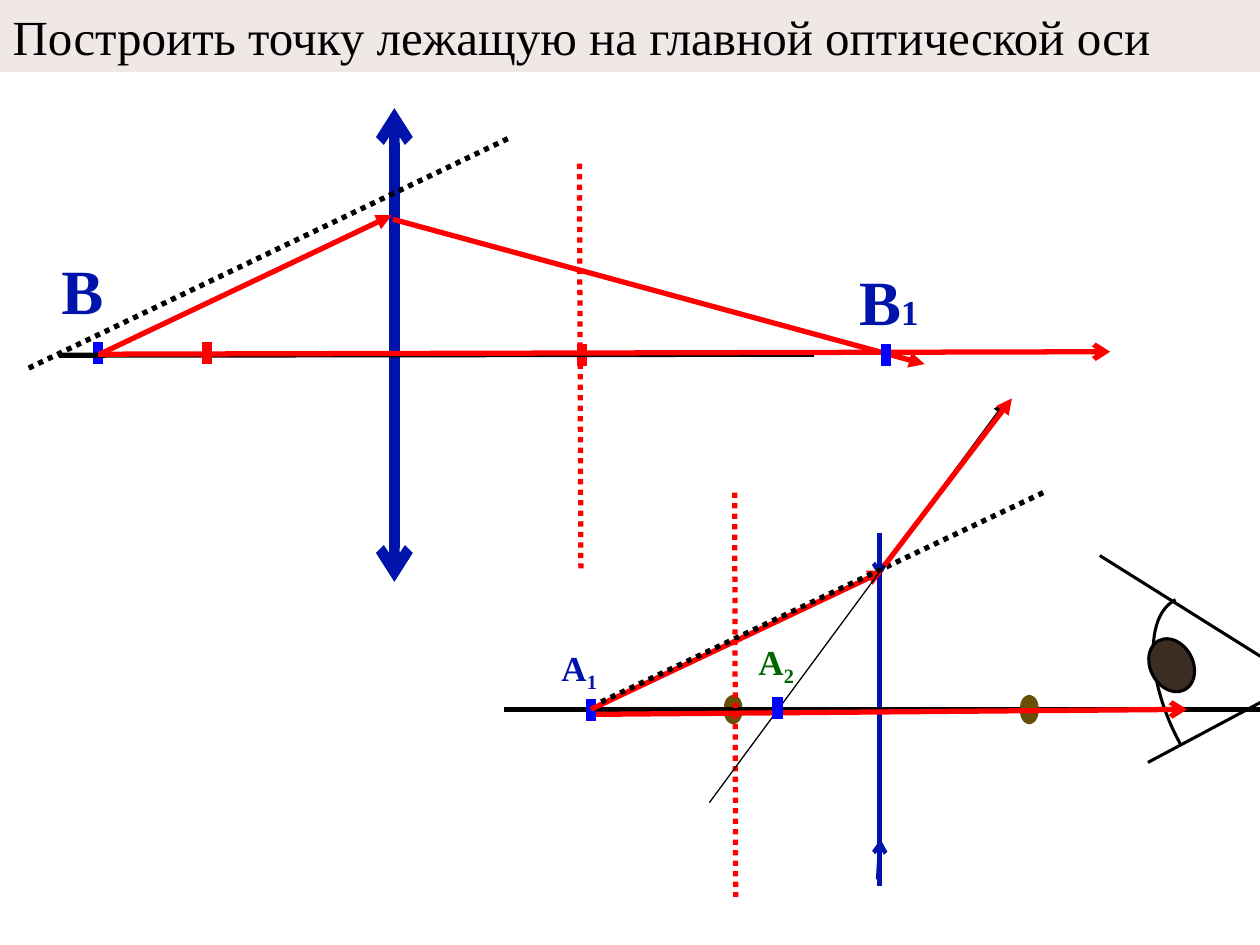
from dataclasses import dataclass
from typing import Optional

from lxml.etree import SubElement
from pptx import Presentation
from pptx.dml.color import RGBColor
from pptx.enum.dml import MSO_LINE
from pptx.enum.shapes import MSO_CONNECTOR, MSO_SHAPE
from pptx.enum.text import MSO_ANCHOR, MSO_AUTO_SIZE, PP_ALIGN
from pptx.oxml.ns import qn
from pptx.util import Cm, Pt

Point = tuple[float, float]


@dataclass(frozen=True)
class Theme:
    font: str = "Times New Roman"
    black: str = "000000"
    red: str = "FF0000"
    navy: str = "0014AC"
    blue: str = "0000FF"
    green: str = "006600"
    olive: str = "695008"
    brown: str = "3B2C24"
    band: str = "F0E8E6"
    title: int = 28
    big: int = 36
    small: int = 20


T = Theme()


@dataclass(frozen=True)
class Line:
    start: Point
    end: Point
    color: str = T.red
    width: float = 3
    dotted: bool = False
    head: Optional[str] = None
    tail: Optional[str] = None


@dataclass(frozen=True)
class Oval:
    left: float
    top: float
    width: float
    height: float
    fill: str
    line: str
    weight: float
    rotation: float = 0


@dataclass(frozen=True)
class Label:
    left: float
    top: float
    width: float
    height: float
    letter: str
    index: str
    size: int
    color: str
    subscript: bool = False


def tick(x: float, y: float, color: str) -> Line:
    return Line((x, y), (x, y + 0.44), color, 6)


def focus(x: float) -> Oval:
    return Oval(x, 14.1, 0.2, 0.41, T.red, T.olive, 5.25)


def rgb(color: str) -> RGBColor:
    return RGBColor.from_string(color)


def draw_line(s, item: Line) -> None:
    ends = (Cm(v) for v in (*item.start, *item.end))
    c = s.shapes.add_connector(MSO_CONNECTOR.STRAIGHT, *ends)
    c.line.color.rgb = rgb(item.color)
    c.line.width = Pt(item.width)
    if item.dotted:
        c.line.dash_style = MSO_LINE.ROUND_DOT
    sp_pr = c._element.spPr
    ln = sp_pr.find(qn("a:ln"))
    for tag, kind in (("a:headEnd", item.head), ("a:tailEnd", item.tail)):
        if kind:
            SubElement(ln, qn(tag), type=kind)
    SubElement(sp_pr, qn("a:effectLst"))


def draw_oval(s, item: Oval) -> None:
    box = (Cm(v) for v in (item.left, item.top, item.width, item.height))
    sp = s.shapes.add_shape(MSO_SHAPE.OVAL, *box)
    sp.shadow.inherit = False
    sp.rotation = item.rotation
    sp.fill.solid()
    sp.fill.fore_color.rgb = rgb(item.fill)
    sp.line.color.rgb = rgb(item.line)
    sp.line.width = Pt(item.weight)


def add_run(p, text: str, size: int, color: str, bold: bool = False):
    r = p.add_run()
    r.text = text
    r.font.name = T.font
    r.font.size = Pt(size)
    r.font.bold = bold
    r.font.color.rgb = rgb(color)
    return r


def draw_label(s, item: Label) -> None:
    box = (Cm(v) for v in (item.left, item.top, item.width, item.height))
    tf = s.shapes.add_textbox(*box).text_frame
    tf.word_wrap = False
    p = tf.paragraphs[0]
    add_run(p, item.letter, item.size, item.color, True)
    if item.index:
        r = add_run(p, item.index, T.small, item.color, True)
        if item.subscript:
            r._r.get_or_add_rPr().set("baseline", "-25000")


def draw_cornea(s, controls: list[Point], steps: int = 24) -> None:
    def at(t: float) -> Point:
        weights = ((1 - t) ** 3, 3 * t * (1 - t) ** 2, 3 * t * t * (1 - t), t ** 3)
        x, y = (sum(w * c[i] for w, c in zip(weights, controls)) for i in (0, 1))
        return Cm(x), Cm(y)

    points = [at(i / steps) for i in range(steps + 1)]
    fb = s.shapes.build_freeform(*points[0])
    fb.add_line_segments(points[1:], close=False)
    sp = fb.convert_to_shape()
    sp.shadow.inherit = False
    sp.fill.background()
    sp.line.color.rgb = rgb(T.black)
    sp.line.width = Pt(1.75)


def draw_title(s, text: str) -> None:
    sp = s.shapes.title
    sp.left, sp.top, sp.width, sp.height = Cm(0), Cm(0), Cm(25.4), Cm(1.45)
    sp.fill.solid()
    sp.fill.fore_color.rgb = rgb(T.band)
    tf = sp.text_frame
    tf.auto_size = MSO_AUTO_SIZE.NONE
    tf.vertical_anchor = MSO_ANCHOR.MIDDLE
    p = tf.paragraphs[0]
    p.alignment = PP_ALIGN.LEFT
    add_run(p, text, T.title, T.black)


def draw_all(s, items: list) -> None:
    draw = {Line: draw_line, Oval: draw_oval, Label: draw_label}
    for item in items:
        draw[type(item)](s, item)


CONVERGING_LENS = [
    Line((7.95, 2.18), (7.95, 11.73), T.navy, 6, head="arrow", tail="arrow"),
    tick(11.73, 6.93, T.red),
    tick(1.98, 6.9, T.blue),
    Line((11.68, 3.3), (11.71, 11.46), dotted=True),
    Line((2.01, 7.14), (7.9, 4.34), tail="triangle"),
    Line((7.92, 4.42), (18.64, 7.34), tail="triangle"),
    Line((16.41, 7.14), (1.19, 7.16), T.black),
    tick(4.17, 6.9, T.red),
    Label(0.99, 4.95, 1.6, 1.8, "В", "", T.big, T.navy),
    Line((1.98, 7.14), (22.38, 7.09), tail="arrow"),
    Line((0.58, 7.42), (10.29, 2.77), T.black, dotted=True),
    tick(17.86, 6.93, T.blue),
    Label(17.07, 5.16, 2.18, 1.8, "В", "1", T.big, T.navy),
]
DIVERGING_LENS = [
    Line((17.73, 10.74), (17.73, 17.86), T.navy, 2.5),
    Line((17.73, 10.8), (17.73, 11.63), T.navy, 2.5, tail="arrow"),
    Line((17.7, 17.73), (17.75, 16.92), T.navy, 2.5, tail="arrow"),
    focus(14.68),
]
CORNEA = [(23.7, 12.09), (23.06, 12.42), (23.11, 13.74), (23.8, 15.01)]
EYE = [
    Line((26.01, 13.84), (23.14, 15.37), T.black, 1.75),
    Line((26.11, 13.67), (22.17, 11.2), T.black, 1.75),
    Oval(23.19, 12.85, 0.86, 1.12, T.brown, T.black, 1.75, 331.9),
]
VIRTUAL_IMAGE = [
    Label(11.07, 12.9, 1.27, 1.12, "А", "1", T.small, T.navy, True),
    Label(15.04, 12.78, 1.27, 1.12, "А", "2", T.small, T.green, True),
    Line((25.4, 14.3), (10.16, 14.3), T.black),
    tick(11.91, 14.1, T.blue),
    focus(20.65),
    Line((12.01, 14.4), (23.93, 14.3), tail="arrow"),
    Line((11.91, 14.3), (17.81, 11.51), tail="triangle"),
    Line((12.12, 14.15), (21.03, 9.93), T.black, dotted=True),
    Line((14.81, 9.93), (14.83, 18.08), dotted=True),
    Line((14.3, 16.18), (20.24, 8.13), T.black, 0.75, tail="triangle"),
    tick(15.67, 14.05, T.blue),
    Line((17.83, 11.4), (20.4, 8.03), tail="triangle"),
]


def main() -> None:
    prs = Presentation()
    prs.slide_width, prs.slide_height = Cm(25.4), Cm(19.05)
    s = prs.slides.add_slide(prs.slide_layouts[5])
    draw_title(s, "Построить точку лежащую на главной оптической оси")
    draw_all(s, CONVERGING_LENS + DIVERGING_LENS)
    draw_cornea(s, CORNEA)
    draw_all(s, EYE + VIRTUAL_IMAGE)
    prs.save("out.pptx")


if __name__ == "__main__":
    main()
